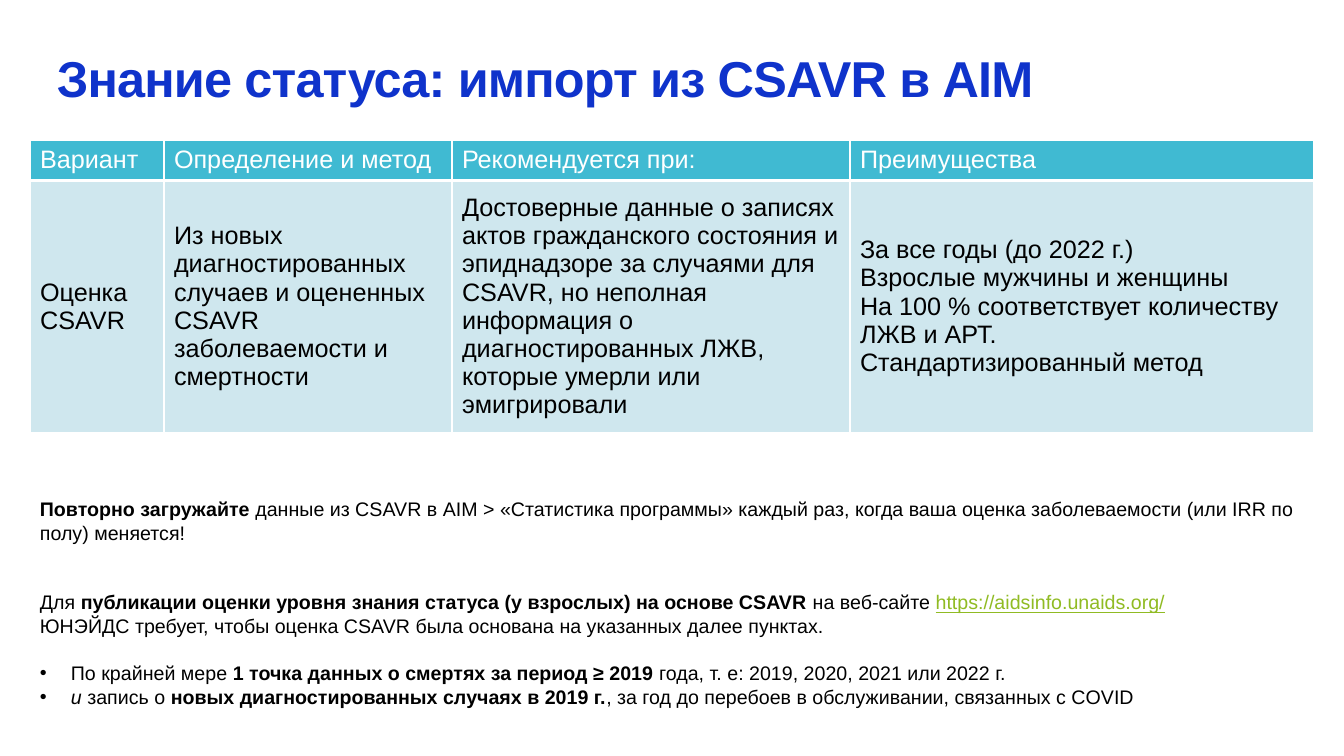
"""Builds the slide on importing status knowledge estimates from CSAVR into AIM."""
from lxml import etree
from pptx import Presentation
from pptx.dml.color import RGBColor
from pptx.enum.text import MSO_ANCHOR
from pptx.oxml.ns import qn
from pptx.util import Emu, Pt

MIDDLE, TOP = MSO_ANCHOR.MIDDLE, MSO_ANCHOR.TOP
FONT = "Arial"
COLORS = {"title": "0F33CB", "header": "40BAD2", "row": "CFE7EE",
          "white": "FFFFFF", "black": "000000", "link": "90BB23"}


class SlideBuilder:
    """Holds the style and the current slide."""

    def __init__(self, slide):
        self.slide = slide

    @staticmethod
    def px(length):
        """Turns px into EMU."""
        return Emu(round(length * 914400 / 100.8))

    @staticmethod
    def color(name):
        """Looks up a colour."""
        return RGBColor.from_string(COLORS[name])

    def style(self, paragraph, size, color):
        """Sets the font of a whole paragraph."""
        font = paragraph.font
        font.name, font.size = FONT, Pt(size)
        font.color.rgb = self.color(color)

    def text_box(self, left, top, width, height, anchor):
        """Adds a wrapping text box and returns its frame."""
        box = self.slide.shapes.add_textbox(*map(self.px, (left, top, width, height)))
        frame = box.text_frame
        frame.word_wrap, frame.vertical_anchor = True, anchor
        return frame

    def title(self, text, *place):
        """Adds the slide title."""
        heading = self.text_box(*place, MIDDLE).paragraphs[0]
        run = heading.add_run()
        run.text = text
        run._r.get_or_add_rPr().set("spc", "-60")
        heading.line_spacing = 0.9
        self.style(heading, 36, "title")
        heading.font.bold = True

    def bullet(self, paragraph):
        """Gives a paragraph a hanging bullet."""
        properties = paragraph._p.get_or_add_pPr()
        indent = self.px(31)
        properties.set("marL", str(indent))
        properties.set("indent", str(-indent))
        etree.SubElement(properties, qn("a:buFont")).set("typeface", FONT)
        etree.SubElement(properties, qn("a:buChar")).set("char", "•")

    def notes(self, paragraphs, *place):
        """Adds paragraphs given as (space before, bulleted, runs)."""
        frame = self.text_box(*place, TOP)
        for index, (space, bulleted, runs) in enumerate(paragraphs):
            paragraph = frame.add_paragraph() if index else frame.paragraphs[0]
            if space:
                paragraph.space_before = Pt(space)
            if bulleted:
                self.bullet(paragraph)
            self.style(paragraph, 14, "black")
            for text, look in runs:
                if look == "break":
                    paragraph.add_line_break()
                run = paragraph.add_run()
                run.text = text
                if look == "bold":
                    run.font.bold = True
                elif look == "italic":
                    run.font.italic = True
                elif look == "link":
                    run.font.underline = True
                    run.font.color.rgb = self.color("link")

    def borders(self, cell, bottom):
        """Draws white borders round a cell."""
        properties = cell._tc.get_or_add_tcPr()
        for side, width in (("L", 1), ("R", 1), ("T", 1), ("B", bottom)):
            line = etree.SubElement(properties, qn(f"a:ln{side}"), w=str(Pt(width)))
            fill = etree.SubElement(line, qn("a:solidFill"))
            etree.SubElement(fill, qn("a:srgbClr"), val=COLORS["white"])

    def table(self, rows, widths, heights, left, top):
        """Adds a table with a header row."""
        place = map(self.px, (left, top, sum(widths), sum(heights)))
        table = self.slide.shapes.add_table(len(rows), len(widths), *place).table
        table.horz_banding = False
        for column, width in zip(table.columns, widths):
            column.width = self.px(width)
        for r, texts in enumerate(rows):
            table.rows[r].height = self.px(heights[r])
            fill, ink, bottom = ("row", "black", 1) if r else ("header", "white", 3)
            for c, text in enumerate(texts):
                cell = table.cell(r, c)
                cell.text = text
                cell.vertical_anchor = MIDDLE
                self.borders(cell, bottom)
                cell.fill.solid()
                cell.fill.fore_color.rgb = self.color(fill)
                for paragraph in cell.text_frame.paragraphs:
                    self.style(paragraph, 18, ink)
                    paragraph.font.bold = False


OPTIONS = [
    ["Вариант", "Определение и метод", "Рекомендуется при:", "Преимущества"],
    ["Оценка CSAVR",
     "Из новых диагностированных случаев и оцененных CSAVR заболеваемости и смертности",
     "Достоверные данные о записях актов гражданского состояния и эпиднадзоре за "
     "случаями для CSAVR, но неполная информация о диагностированных ЛЖВ, "
     "которые умерли или эмигрировали",
     "За все годы (до 2022 г.)\nВзрослые мужчины и женщины\n"
     "На 100 % соответствует количеству ЛЖВ и АРТ.\nСтандартизированный метод"],
]
REQUIREMENTS = [
    (0, False, [
        ("Повторно загружайте", "bold"),
        (" данные из CSAVR в AIM > «Статистика программы» каждый раз, когда ваша "
         "оценка заболеваемости (или IRR по полу) меняется!", "plain")]),
    (33, False, [
        ("Для ", "plain"),
        ("публикации оценки уровня знания статуса (у взрослых) на основе CSAVR", "bold"),
        (" на веб-сайте ", "plain"),
        ("https://aidsinfo.unaids.org/", "link"),
        ("ЮНЭЙДС требует, чтобы оценка CSAVR была основана на указанных далее пунктах.",
         "break")]),
    (17, True, [
        ("По крайней мере ", "plain"),
        ("1 точка данных о смертях за период ≥ 2019", "bold"),
        (" года, т. е: 2019, 2020, 2021 или 2022 г.", "plain")]),
    (0, True, [
        ("и", "italic"),
        (" запись о ", "plain"),
        ("новых диагностированных случаях в 2019 г.", "bold"),
        (", за год до перебоев в обслуживании, связанных с COVID", "plain")]),
]


def main():
    """Builds and saves the slide."""
    deck = Presentation()
    deck.slide_width, deck.slide_height = SlideBuilder.px(1344), SlideBuilder.px(756)
    builder = SlideBuilder(deck.slides.add_slide(deck.slide_layouts[6]))
    builder.title("Знание статуса: импорт из CSAVR в AIM", 47, 10, 1284, 142)
    builder.table(OPTIONS, [134, 288, 398, 464], [39, 235], 30, 140)
    builder.notes(REQUIREMENTS, 30, 492, 1284, 248)
    deck.save("out.pptx")


if __name__ == "__main__":
    main()
